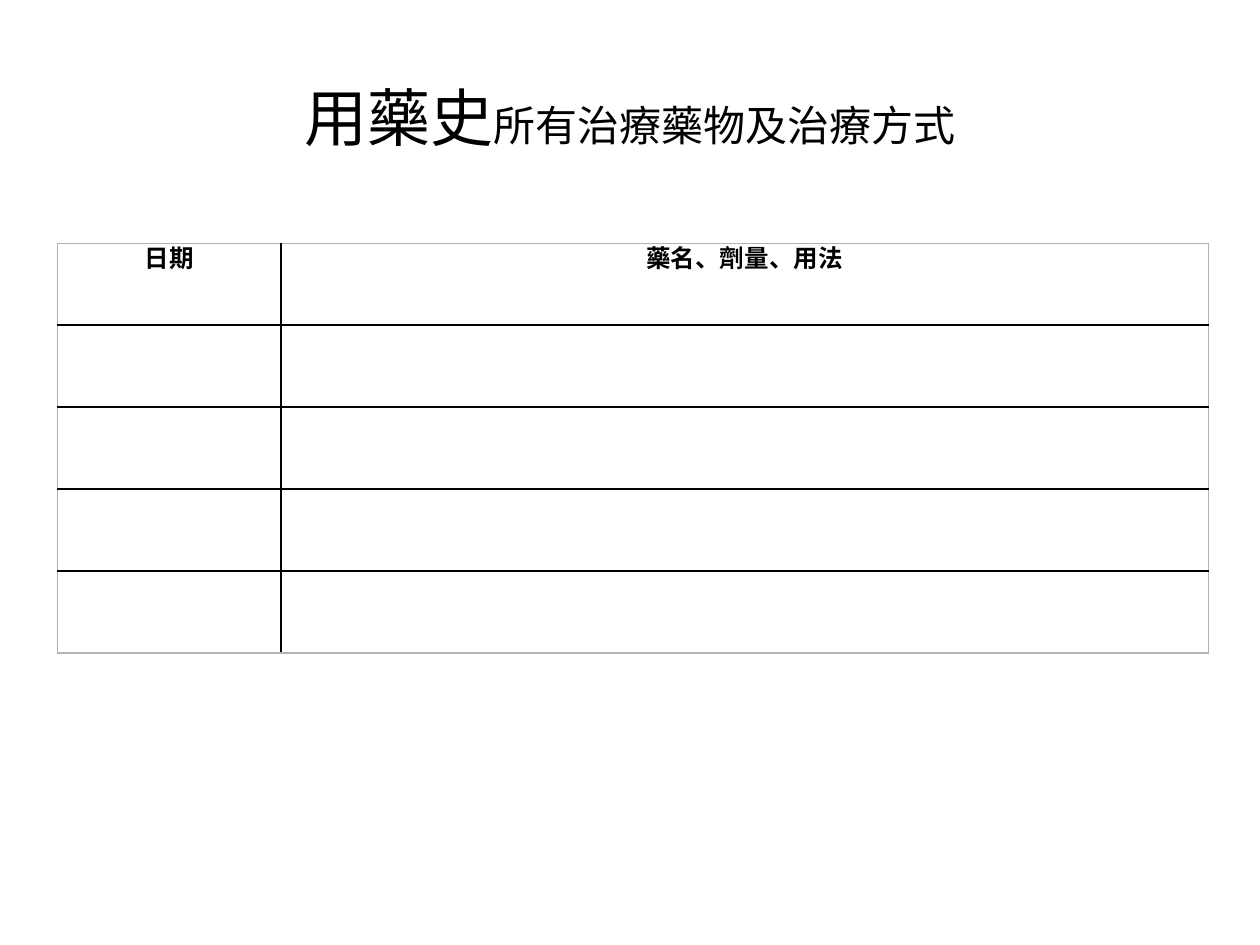
from dataclasses import dataclass

from lxml import etree
from pptx import Presentation
from pptx.dml.color import RGBColor
from pptx.enum.text import MSO_ANCHOR, PP_ALIGN
from pptx.oxml.ns import qn
from pptx.util import Pt

CENTER = PP_ALIGN.CENTER
MIDDLE = MSO_ANCHOR.MIDDLE
TOP = MSO_ANCHOR.TOP


@dataclass(frozen=True)
class Theme:
    ink: str = "000000"
    frame: str = "B2B2B2"
    title_font: str = "Calibri"
    table_font: str = "Arial"
    title_size: int = 36
    subtitle_size: int = 24
    header_size: int = 14
    border_width: int = 1


theme = Theme()


def add_span(para, text, font, size, bold):
    span = para.add_run()
    span.text = text
    span.font.name = font
    span.font.size = Pt(size)
    span.font.bold = bold
    span.font.color.rgb = RGBColor.from_string(theme.ink)


def add_border(cell, side, color):
    properties = cell._tc.get_or_add_tcPr()
    line = etree.SubElement(properties, qn(f"a:ln{side}"), w=str(Pt(theme.border_width)))
    fill = etree.SubElement(line, qn("a:solidFill"))
    etree.SubElement(fill, qn("a:srgbClr"), val=color)


deck = Presentation()
deck.slide_width = Pt(720)
deck.slide_height = Pt(540)
page = deck.slides.add_slide(deck.slide_layouts[5])

title = page.shapes.title
title.left, title.top, title.width, title.height = Pt(36), Pt(21.6), Pt(648), Pt(90)
title.text_frame.vertical_anchor = MIDDLE
title_para = title.text_frame.paragraphs[0]
title_para.alignment = CENTER
add_span(title_para, "用藥史", theme.title_font, theme.title_size, False)
add_span(title_para, "所有治療藥物及治療方式", theme.title_font, theme.subtitle_size, False)

headers = ["日期", "藥名、劑量、用法"]
column_widths = [127.5, 530]
row_count = 5
row_height = 46.8
last_row = row_count - 1
last_column = len(headers) - 1

table = page.shapes.add_table(
    row_count, len(headers), Pt(33), Pt(139), Pt(sum(column_widths)), Pt(row_count * row_height)
).table
table.first_row = False
table.horz_banding = False
for column, width in zip(table.columns, column_widths):
    column.width = Pt(width)

for row_index, row in enumerate(table.rows):
    row.height = Pt(row_height)
    for column_index, cell in enumerate(row.cells):
        outer_sides = {
            "L": column_index == 0,
            "R": column_index == last_column,
            "T": row_index == 0,
            "B": row_index == last_row,
        }
        for side, is_outer in outer_sides.items():
            add_border(cell, side, theme.frame if is_outer else theme.ink)
        cell.fill.background()
        cell.margin_left = cell.margin_right = Pt(1.44)
        cell.margin_top = cell.margin_bottom = Pt(0)
        cell.vertical_anchor = TOP

for cell, header in zip(table.rows[0].cells, headers):
    para = cell.text_frame.paragraphs[0]
    para.alignment = CENTER
    para.line_spacing = Pt(18)
    add_span(para, header, theme.table_font, theme.header_size, True)

deck.save("out.pptx")
